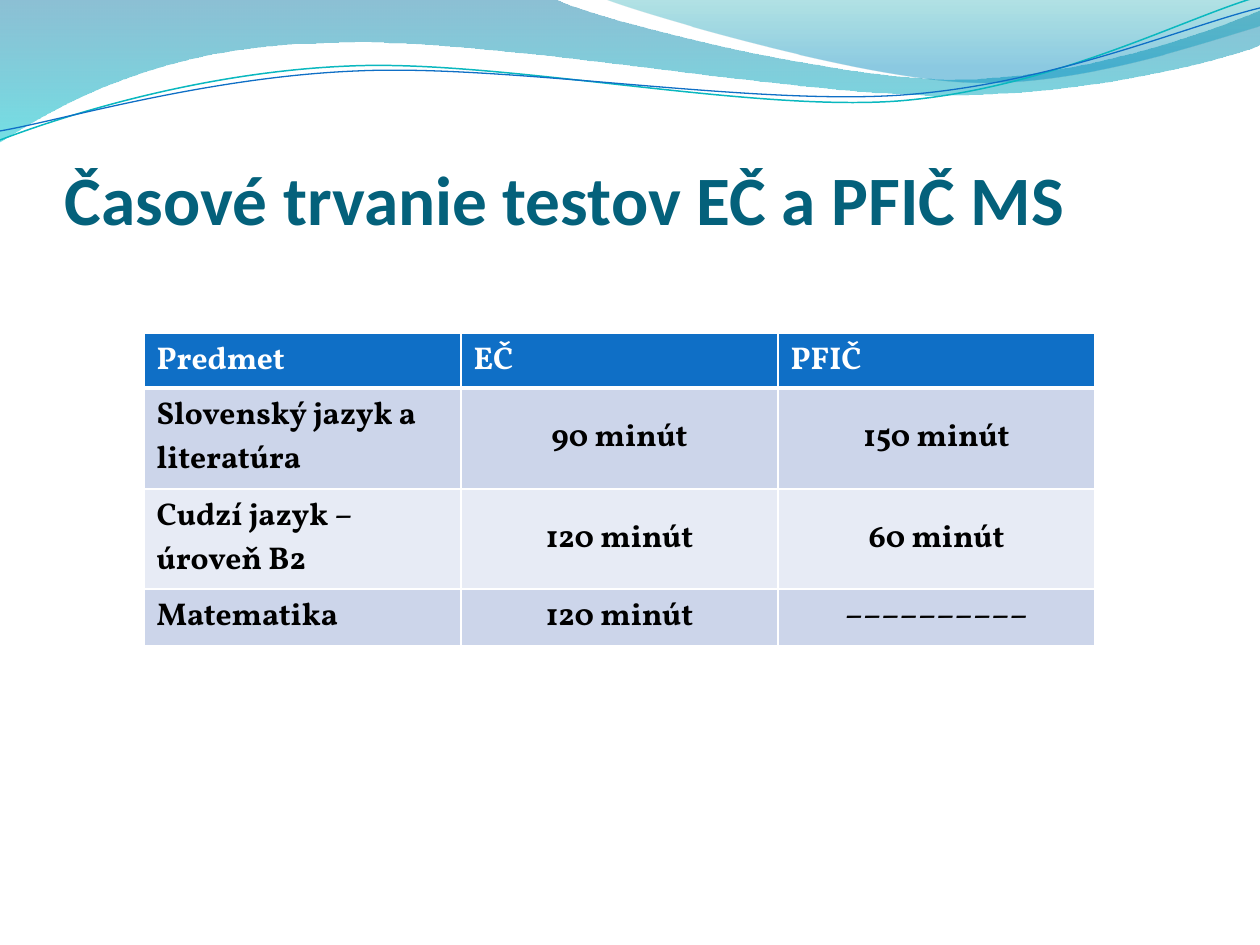
from dataclasses import dataclass

from lxml.etree import SubElement
from pptx import Presentation
from pptx.dml.color import RGBColor
from pptx.enum.text import MSO_ANCHOR, PP_ALIGN
from pptx.oxml.ns import qn
from pptx.shapes.autoshape import Shape
from pptx.slide import Slide
from pptx.table import _Cell
from pptx.text.text import TextFrame
from pptx.util import Emu, Pt

PX_PER_INCH = 126

WHITE = RGBColor(0xFF, 0xFF, 0xFF)
BLACK = RGBColor(0x00, 0x00, 0x00)
TITLE_TEAL = RGBColor(0x04, 0x61, 0x7B)
BLUE = RGBColor(0x0F, 0x6F, 0xC6)
CYAN = RGBColor(0x0A, 0xB8, 0xBF)
WAVE_BLUE = RGBColor(0x00, 0x74, 0xA1)
WAVE_CYAN = RGBColor(0x00, 0xC6, 0xCF)
CREST_TEAL = RGBColor(0x00, 0xA1, 0xA9)
CREST_BLUE = RGBColor(0x00, 0x8B, 0xBF)
BAND_DARK = RGBColor(0xCC, 0xD5, 0xEA)
BAND_LIGHT = RGBColor(0xE7, 0xEB, 0xF5)

Point = tuple[int, int]
Segment = tuple[Point, ...]


@dataclass(frozen=True)
class Stop:
    position: float
    color: RGBColor
    opacity: int


@dataclass(frozen=True)
class Wave:
    start: Point
    segments: tuple[Segment, ...]
    stops: tuple[Stop, Stop]


@dataclass(frozen=True)
class Strand:
    start: Point
    segments: tuple[Segment, ...]
    color: RGBColor
    width: float


WAVES = (
    Wave((0, 0), (
        ((554, -1),),
        ((600, 21), (837, 79), (955, 79)),
        ((1075, 79), (1207, 33), (1260, 11)),
        ((1261, 45),),
        ((1239, 55), (1096, 96), (940, 95)),
        ((784, 95), (481, 35), (324, 43)),
        ((163, 45), (58, 105), (-1, 142)),
    ), (Stop(0, WAVE_BLUE, 45), Stop(1, WAVE_CYAN, 55))),
    Wave((604, -1), (
        ((641, 14), (859, 78), (969, 82)),
        ((1079, 87), (1211, 40), (1260, 26)),
        ((1260, 0),),
    ), (Stop(0, CREST_TEAL, 30), Stop(0.8, CREST_BLUE, 45))),
)

STRANDS = (
    Strand((0, 140), (
        ((60, 117), (199, 72), (349, 66)),
        ((498, 59), (747, 112), (898, 101)),
        ((1050, 89), (1182, 19), (1257, -3)),
    ), CYAN, 0.85),
    Strand((0, 131), (
        ((59, 121), (207, 77), (357, 71)),
        ((508, 64), (752, 106), (903, 95)),
        ((1053, 84), (1186, 26), (1260, 8)),
    ), BLUE, 0.75),
)

TABLE_ROWS = (
    ("Predmet", "EČ", "PFIČ"),
    ("Slovenský jazyk a literatúra", "90 minút", "150 minút"),
    ("Cudzí jazyk – úroveň B2", "120 minút", "60 minút"),
    ("Matematika", "120 minút", "––––––––––"),
)
ROW_HEIGHTS = (55, 101, 100, 57)
COLUMN_WIDTH = 317


def px(length: int) -> Emu:
    return Emu(round(length * 914400 / PX_PER_INCH))


def draw_outline(page: Slide, start: Point, segments: tuple[Segment, ...], close: bool) -> Shape:
    anchors = [start, *(segment[-1] for segment in segments)]
    left, top = (min(values) for values in zip(*anchors))
    points = [(px(x), px(y)) for x, y in anchors]
    builder = page.shapes.build_freeform(*points[0])
    builder.add_line_segments(points[1:], close=close)
    shape = builder.convert_to_shape()
    shape.shadow.inherit = False
    sides = list(shape.element.spPr.iter(qn("a:lnTo")))
    for side, segment in zip(sides, segments):
        if len(segment) == 3:
            side.tag = qn("a:cubicBezTo")
            for index, (x, y) in enumerate(segment[:-1]):
                place = {"x": str(px(x - left)), "y": str(px(y - top))}
                side.insert(index, side.makeelement(qn("a:pt"), place))
    return shape


def draw_wave(page: Slide, wave: Wave) -> None:
    shape = draw_outline(page, wave.start, wave.segments, close=True)
    shape.line.fill.background()
    shape.fill.gradient()
    shape.fill.gradient_angle = 270
    for target, stop in zip(shape.fill.gradient_stops, wave.stops):
        target.position = stop.position
        target.color.rgb = stop.color
    colors = shape.element.spPr.iter(qn("a:srgbClr"))
    for color, stop in zip(colors, wave.stops):
        SubElement(color, qn("a:alpha"), val=str(stop.opacity * 1000))


def draw_strand(page: Slide, strand: Strand) -> None:
    shape = draw_outline(page, strand.start, strand.segments, close=False)
    shape.fill.background()
    shape.line.color.rgb = strand.color
    shape.line.width = Pt(strand.width)


def write_text(frame: TextFrame, text: str, *, font: str, size: float, color: RGBColor,
               align: PP_ALIGN = PP_ALIGN.LEFT) -> None:
    frame.word_wrap = True
    para = frame.paragraphs[0]
    para.alignment = align
    span = para.add_run()
    span.text = text
    span.font.name = font
    span.font.size = Pt(size)
    span.font.bold = True
    span.font.color.rgb = color


def draw_title(page: Slide, text: str) -> None:
    box = page.shapes.add_textbox(px(65), px(165), px(1134), px(157))
    frame = box.text_frame
    frame.margin_left = frame.margin_right = frame.margin_top = 0
    frame.margin_bottom = px(83)
    frame.vertical_anchor = MSO_ANCHOR.BOTTOM
    write_text(frame, text, font="Calibri", size=39.6, color=TITLE_TEAL)


def set_borders(cell: _Cell, **widths: float) -> None:
    properties = cell._tc.get_or_add_tcPr()
    for index, (side, width) in enumerate(widths.items()):
        line = properties.makeelement(qn(f"a:{side}"), {"w": str(Pt(width))})
        fill = SubElement(line, qn("a:solidFill"))
        SubElement(fill, qn("a:srgbClr"), val=str(WHITE))
        properties.insert(index, line)


def draw_table(page: Slide) -> None:
    columns = len(TABLE_ROWS[0])
    table = page.shapes.add_table(
        len(TABLE_ROWS), columns, px(144), px(333),
        px(COLUMN_WIDTH * columns), px(sum(ROW_HEIGHTS)),
    ).table
    for column in table.columns:
        column.width = px(COLUMN_WIDTH)
    for row, (texts, height) in enumerate(zip(TABLE_ROWS, ROW_HEIGHTS)):
        table.rows[row].height = px(height)
        header = row == 0
        band = BAND_DARK if row % 2 else BAND_LIGHT
        for column, text in enumerate(texts):
            cell = table.cell(row, column)
            centered = not header and column > 0
            cell.fill.solid()
            cell.fill.fore_color.rgb = BLUE if header else band
            cell.vertical_anchor = MSO_ANCHOR.MIDDLE if centered else MSO_ANCHOR.TOP
            write_text(cell.text_frame, text, font="Vollkorn", size=18,
                       color=WHITE if header else BLACK,
                       align=PP_ALIGN.CENTER if centered else PP_ALIGN.LEFT)
            set_borders(cell, lnL=1, lnR=1, lnT=3 if row == 1 else 1, lnB=3 if header else 1)


def main() -> None:
    deck = Presentation()
    deck.slide_width, deck.slide_height = px(1260), px(945)
    page = deck.slides.add_slide(deck.slide_layouts[6])
    for wave in WAVES:
        draw_wave(page, wave)
    for strand in STRANDS:
        draw_strand(page, strand)
    draw_title(page, "Časové trvanie testov EČ a PFIČ MS")
    draw_table(page)
    deck.save("out.pptx")


if __name__ == "__main__":
    main()
